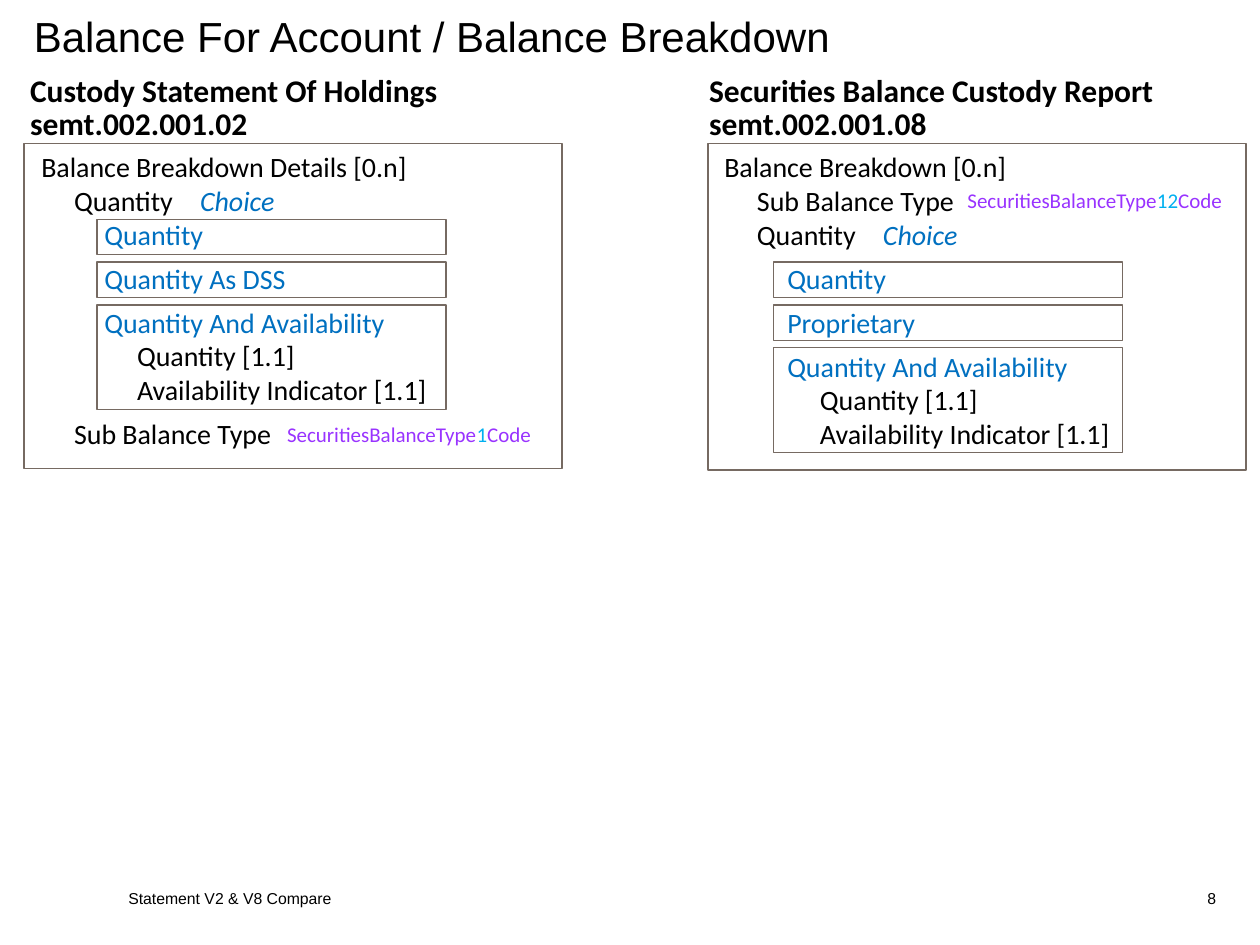
from dataclasses import dataclass

from lxml.etree import SubElement
from pptx import Presentation
from pptx.dml.color import RGBColor
from pptx.enum.shapes import MSO_SHAPE
from pptx.enum.text import MSO_ANCHOR, MSO_AUTO_SIZE, PP_ALIGN
from pptx.oxml.ns import qn
from pptx.slide import Slide
from pptx.text.text import TextFrame
from pptx.util import Inches, Pt

BLACK = RGBColor(0x00, 0x00, 0x00)
BLUE = RGBColor(0x00, 0x70, 0xC0)
CYAN = RGBColor(0x00, 0xB0, 0xF0)
PURPLE = RGBColor(0x99, 0x33, 0xFF)
BORDER = RGBColor(0x76, 0x6A, 0x62)

# Vertical rhythm of the two panels, in inches
HEADING_TOP = 0.55
PANEL_TOP = 1.14
OPTION_TOP = 1.74
OPTION_PITCH = 0.34
OPTION_HEIGHTS = (0.28, 0.28, 0.83)
OPTION_WIDTH = 2.77
PANEL_WIDTH = 4.27

# Tab stops that indent each level of the message tree
FIELD = (0.26,)
OPTION = (0.26, 0.5)
DETAIL = (0.26, 0.5, 0.76)
CHOICE_STOP = 1.26


@dataclass(frozen=True)
class Line:
    text: str
    stops: tuple[float, ...] = ()
    color: RGBColor = BLACK
    after: int = 0
    has_choice: bool = False


@dataclass(frozen=True)
class Panel:
    heading: tuple[str, str]
    heading_left: float
    heading_width: float
    frame_left: float
    frame_height: float
    text_left: float
    text_width: float
    text_height: float
    wraps: bool
    option_left: float
    first_option_row: int
    code_box: tuple[float, float, float, float]
    code_version: str
    lines: tuple[Line, ...]


AVAILABILITY = "Quantity And Availability"

PANELS = (
    Panel(
        ("Custody Statement Of Holdings", "semt.002.001.02"), 0.14, 3.46,
        0.19, 2.58, 0.23, 3.34, 2.59, False, 0.77, 0,
        (2.18, 3.3, 2.16, 0.3), "1",
        (
            Line("Balance Breakdown Details [0.n]"),
            Line("Quantity", FIELD, has_choice=True),
            Line("Quantity", OPTION, BLUE, 6),
            Line("Quantity As DSS", OPTION, BLUE, 6),
            Line(AVAILABILITY, OPTION, BLUE),
            Line("Quantity [1.1]", DETAIL),
            Line("Availability Indicator [1.1]", DETAIL, after=6),
            Line("Sub Balance Type", FIELD),
        ),
    ),
    Panel(
        ("Securities Balance Custody Report", "semt.002.001.08"), 5.53, 3.76,
        5.62, 2.59, 5.65, 4.17, 2.51, True, 6.14, 1,
        (7.58, 1.44, 2.24, 0.3), "12",
        (
            Line("Balance Breakdown [0.n]"),
            Line("Sub Balance Type", FIELD),
            Line("Quantity", FIELD, after=6, has_choice=True),
            Line("Quantity", OPTION, BLUE, 6),
            Line("Proprietary", OPTION, BLUE, 6),
            Line(AVAILABILITY, OPTION, BLUE),
            Line("Quantity [1.1]", DETAIL),
            Line("Availability Indicator [1.1]", DETAIL),
        ),
    ),
)


def add_run(paragraph, text: str, color: RGBColor = BLACK, **font_format) -> None:
    run = paragraph.add_run()
    run.text = text
    run.font.color.rgb = color
    for name, value in font_format.items():
        setattr(run.font, name, value)


def add_text_frame(slide: Slide, left: float, top: float, width: float,
                   height: float, **frame_format) -> TextFrame:
    box = slide.shapes.add_textbox(*map(Inches, (left, top, width, height)))
    for name, value in frame_format.items():
        setattr(box.text_frame, name, value)
    return box.text_frame


def add_label(slide: Slide, text: str, left: float, top: float, width: float,
              height: float, size: int, alignment=PP_ALIGN.LEFT) -> None:
    frame = add_text_frame(slide, left, top, width, height, word_wrap=True,
                           vertical_anchor=MSO_ANCHOR.MIDDLE)
    paragraph = frame.paragraphs[0]
    paragraph.alignment = alignment
    add_run(paragraph, text, name="Arial", size=Pt(size))


def add_outline(slide: Slide, left: float, top: float, width: float,
                height: float) -> None:
    shape = slide.shapes.add_shape(
        MSO_SHAPE.RECTANGLE, *map(Inches, (left, top, width, height)))
    shape.shadow.inherit = False
    shape.fill.background()
    shape.line.color.rgb = BORDER
    shape.line.width = Pt(0.75)


def next_paragraph(frame: TextFrame, index: int):
    return frame.add_paragraph() if index else frame.paragraphs[0]


def set_tab_stops(paragraph, stops: tuple[float, ...]) -> None:
    tab_list = SubElement(paragraph._p.get_or_add_pPr(), qn("a:tabLst"))
    for stop in stops:
        SubElement(tab_list, qn("a:tab"), pos=str(Inches(stop)), algn="l")


def add_heading(slide: Slide, panel: Panel) -> None:
    frame = add_text_frame(slide, panel.heading_left, HEADING_TOP,
                           panel.heading_width, 0.63, word_wrap=False,
                           auto_size=MSO_AUTO_SIZE.SHAPE_TO_FIT_TEXT)
    for index, text in enumerate(panel.heading):
        paragraph = next_paragraph(frame, index)
        paragraph.line_spacing = Pt(19)
        add_run(paragraph, text, name="Calibri", size=Pt(18), bold=True)


def add_tree(slide: Slide, panel: Panel) -> None:
    """Write the message elements, indented by level with tab stops."""
    frame = add_text_frame(slide, panel.text_left, PANEL_TOP, panel.text_width,
                           panel.text_height, word_wrap=panel.wraps,
                           auto_size=MSO_AUTO_SIZE.SHAPE_TO_FIT_TEXT)
    body = {"name": "Calibri", "size": Pt(16)}
    for index, line in enumerate(panel.lines):
        paragraph = next_paragraph(frame, index)
        paragraph.space_after = Pt(line.after)
        if line.stops:
            set_tab_stops(paragraph, line.stops + (CHOICE_STOP,))
        ending = "\t" if line.has_choice else ""
        add_run(paragraph, "\t" * len(line.stops) + line.text + ending,
                line.color, **body)
        if line.has_choice:
            add_run(paragraph, "Choice", BLUE, italic=True, **body)


def add_code_name(slide: Slide, panel: Panel) -> None:
    frame = add_text_frame(slide, *panel.code_box, word_wrap=False,
                           auto_size=MSO_AUTO_SIZE.SHAPE_TO_FIT_TEXT)
    parts = (("SecuritiesBalanceType", PURPLE), (panel.code_version, CYAN),
             ("Code", PURPLE))
    for text, color in parts:
        add_run(frame.paragraphs[0], text, color, name="Calibri", size=Pt(12))


def add_panel(slide: Slide, panel: Panel) -> None:
    add_outline(slide, panel.frame_left, PANEL_TOP, PANEL_WIDTH, panel.frame_height)
    add_tree(slide, panel)
    add_code_name(slide, panel)
    for row, height in enumerate(OPTION_HEIGHTS, panel.first_option_row):
        add_outline(slide, panel.option_left, OPTION_TOP + row * OPTION_PITCH,
                    OPTION_WIDTH, height)
    add_heading(slide, panel)


def main() -> None:
    presentation = Presentation()
    presentation.slide_width, presentation.slide_height = Inches(10), Inches(7.5)
    slide = presentation.slides.add_slide(presentation.slide_layouts[6])
    add_label(slide, "Balance For Account / Balance Breakdown",
              0.17, 0, 9.73, 0.56, 24)
    add_label(slide, "Statement V2 & V8 Compare", 0.92, 7, 6.21, 0.25, 9)
    add_label(slide, "8", 8.92, 7, 0.83, 0.25, 9, PP_ALIGN.RIGHT)
    for panel in PANELS:
        add_panel(slide, panel)
    presentation.save("out.pptx")


if __name__ == "__main__":
    main()
